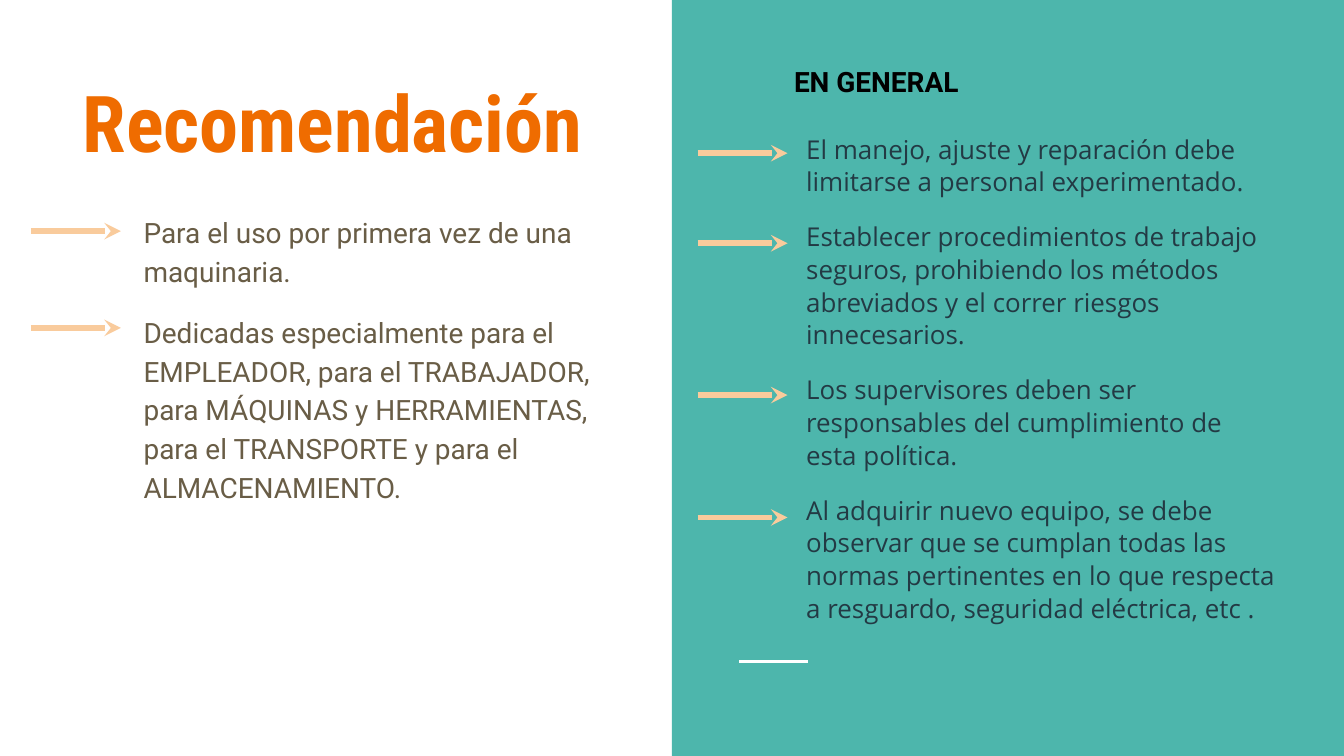
from lxml.etree import SubElement
from pptx import Presentation
from pptx.dml.color import RGBColor
from pptx.enum.shapes import MSO_CONNECTOR, MSO_SHAPE
from pptx.enum.text import MSO_ANCHOR, PP_ALIGN
from pptx.oxml.ns import qn
from pptx.util import Inches, Pt

SLIDE_WIDTH = 10
SLIDE_HEIGHT = SLIDE_WIDTH * 9 / 16
ARROW_LENGTH = 0.67
GENERAL_ADVICE = [
    "El manejo, ajuste y reparación debe limitarse a personal experimentado.",
    "Establecer procedimientos de trabajo seguros, prohibiendo los métodos "
    "abreviados y el correr riesgos innecesarios.",
    "Los supervisores deben ser responsables del cumplimiento de esta política.",
    "Al adquirir nuevo equipo, se debe observar que se cumplan todas las normas "
    "pertinentes en lo que respecta a resguardo, seguridad eléctrica, etc .",
]
RECOMMENDATIONS = [
    "Para el uso por primera vez de una maquinaria.",
    "Dedicadas especialmente para el EMPLEADOR, para el TRABAJADOR, para MÁQUINAS "
    "y HERRAMIENTAS, para el TRANSPORTE y para el ALMACENAMIENTO.",
]


def color(value):
    """Turn a hex string into a colour."""
    return RGBColor.from_string(value)


def add_panel(slide, left, top, width, height, fill):
    """Add a plain coloured rectangle."""
    shape = slide.shapes.add_shape(
        MSO_SHAPE.RECTANGLE, Inches(left), Inches(top), Inches(width), Inches(height)
    )
    shape.shadow.inherit = False
    shape.fill.solid()
    shape.fill.fore_color.rgb = color(fill)
    shape.line.fill.background()


def add_line(slide, left, top, length, line_color, weight, arrow=False):
    """Add a horizontal line, with a stealth arrowhead if asked."""
    connector = slide.shapes.add_connector(
        MSO_CONNECTOR.STRAIGHT,
        Inches(left), Inches(top), Inches(left + length), Inches(top),
    )
    connector.line.color.rgb = color(line_color)
    connector.line.width = Pt(weight)
    properties = connector._element.spPr
    if arrow:
        SubElement(properties.get_or_add_ln(), qn("a:tailEnd"), type="stealth")
    SubElement(properties, qn("a:effectLst"))


def add_text(slide, box, texts, font_name, size, font_color, bold=False,
             anchor=MSO_ANCHOR.TOP, align=PP_ALIGN.LEFT, spacing=1.0, indent=0):
    """Add a text box with one paragraph for each text."""
    text_box = slide.shapes.add_textbox(*[Inches(value) for value in box])
    frame = text_box.text_frame
    frame.word_wrap = True
    frame.vertical_anchor = anchor
    frame.margin_left = frame.margin_right = Inches(0.1)
    frame.margin_top = frame.margin_bottom = Inches(0.1)
    for index, text in enumerate(texts):
        paragraph = frame.add_paragraph() if index else frame.paragraphs[0]
        paragraph.alignment = align
        paragraph.line_spacing = spacing
        paragraph.space_before = Pt(12 if index else 0)
        if indent:
            properties = paragraph._p.get_or_add_pPr()
            properties.set("marL", str(Inches(indent)))
            properties.set("indent", "0")
        run = paragraph.add_run()
        run.text = text
        run.font.name = font_name
        run.font.size = Pt(size)
        run.font.bold = bold
        run.font.color.rgb = color(font_color)


def main():
    """Build the recommendation slide."""
    presentation = Presentation()
    presentation.slide_width = Inches(SLIDE_WIDTH)
    presentation.slide_height = Inches(SLIDE_HEIGHT)
    slide = presentation.slides.add_slide(presentation.slide_layouts[6])

    add_panel(slide, SLIDE_WIDTH / 2, 0, SLIDE_WIDTH / 2, SLIDE_HEIGHT, "4DB6AC")
    add_line(slide, 5.5, 4.92, 0.51, "FFFFFF", 1.5)
    add_text(slide, (0.23, 0.38, 4.49, 0.97), ["Recomendación"], "Roboto Condensed",
             42, "EF6C00", bold=True, anchor=MSO_ANCHOR.BOTTOM, align=PP_ALIGN.CENTER)
    add_text(slide, (5.4, 0.79, 4.2, 4.04), GENERAL_ADVICE, "Open Sans", 13.9,
             "233A44", anchor=MSO_ANCHOR.MIDDLE, spacing=1.05, indent=0.5)
    add_text(slide, (0.47, 1.47, 4.2, 2.37), RECOMMENDATIONS, "Roboto", 15,
             "695D46", spacing=1.15, indent=0.5)
    add_text(slide, (5.81, 0.38, 3.17, 0.45), ["EN GENERAL"], "Roboto", 15,
             "000000", bold=True)

    for left, tops in ((5.19, (1.14, 1.81, 2.94, 3.85)), (0.23, (1.72, 2.44))):
        for top in tops:
            add_line(slide, left, top, ARROW_LENGTH, "F9CB9C", 3, arrow=True)

    presentation.save("out.pptx")


if __name__ == "__main__":
    main()
